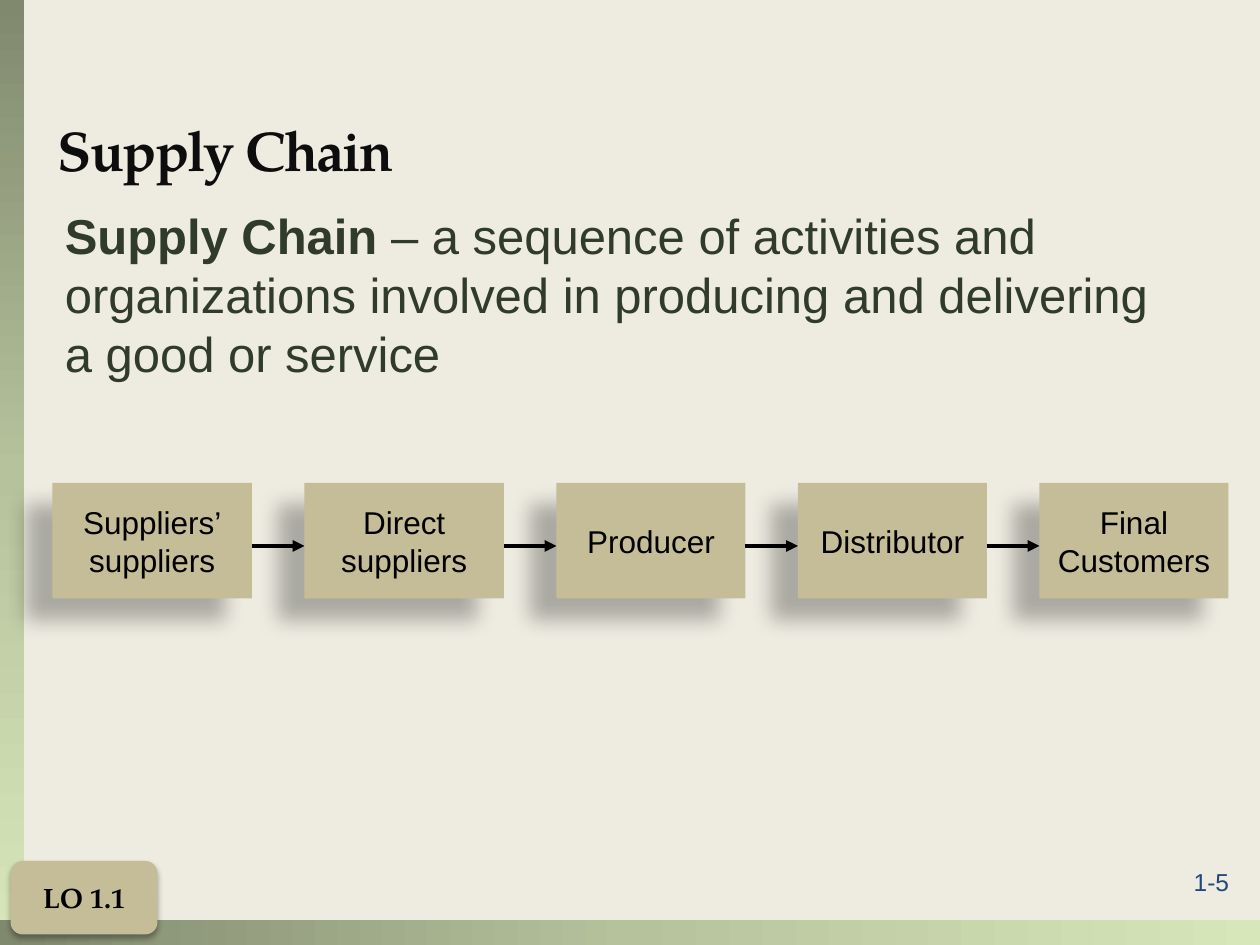
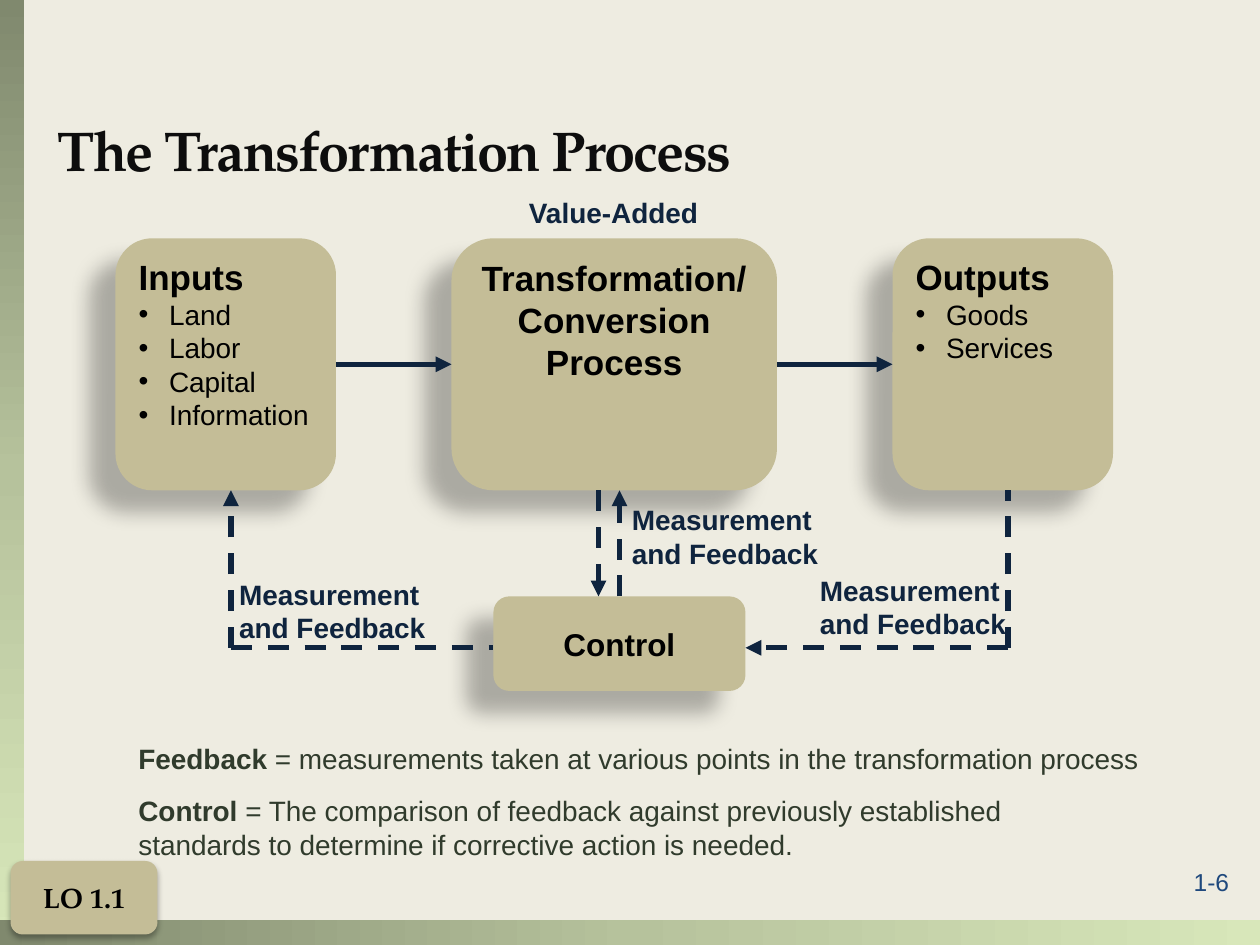
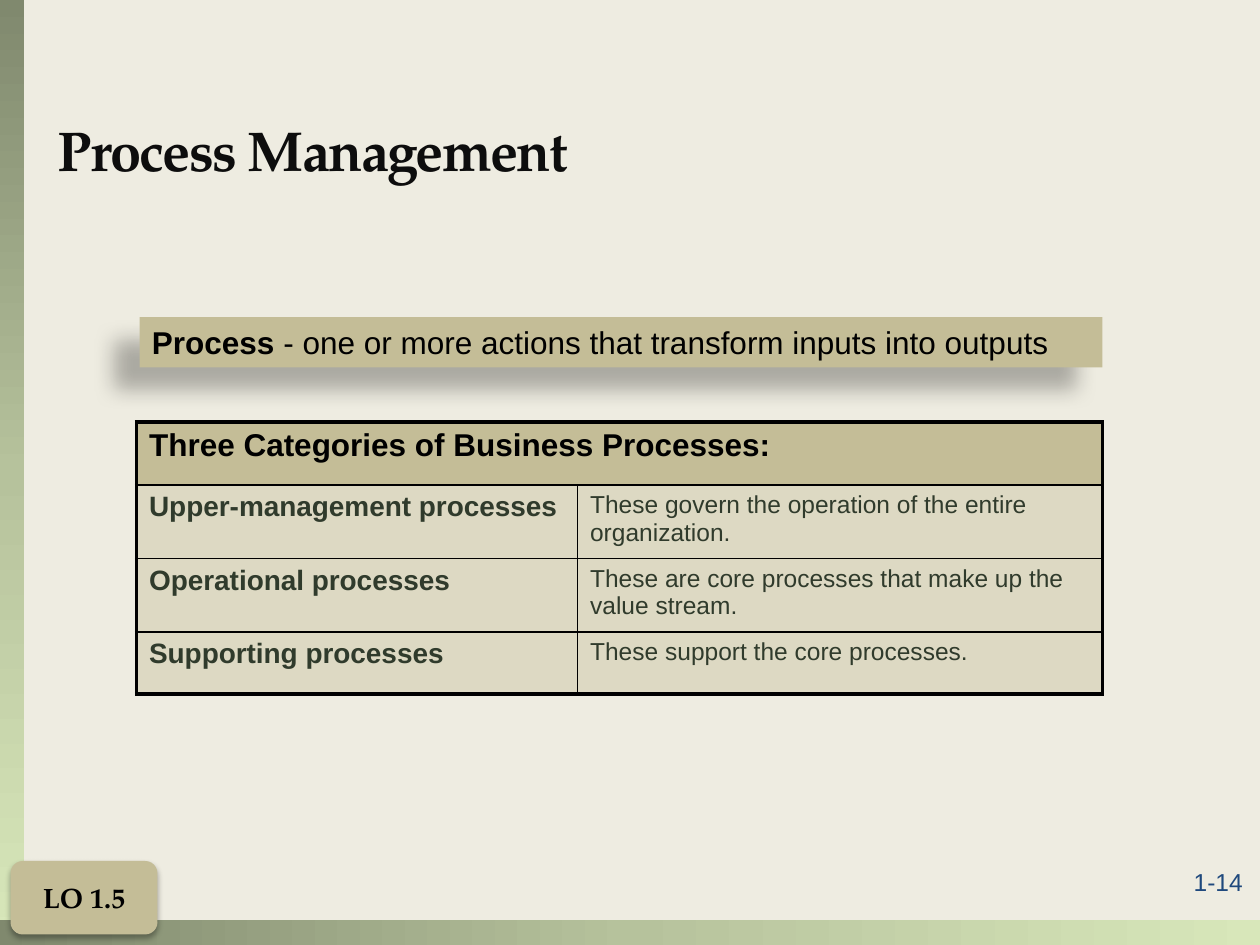
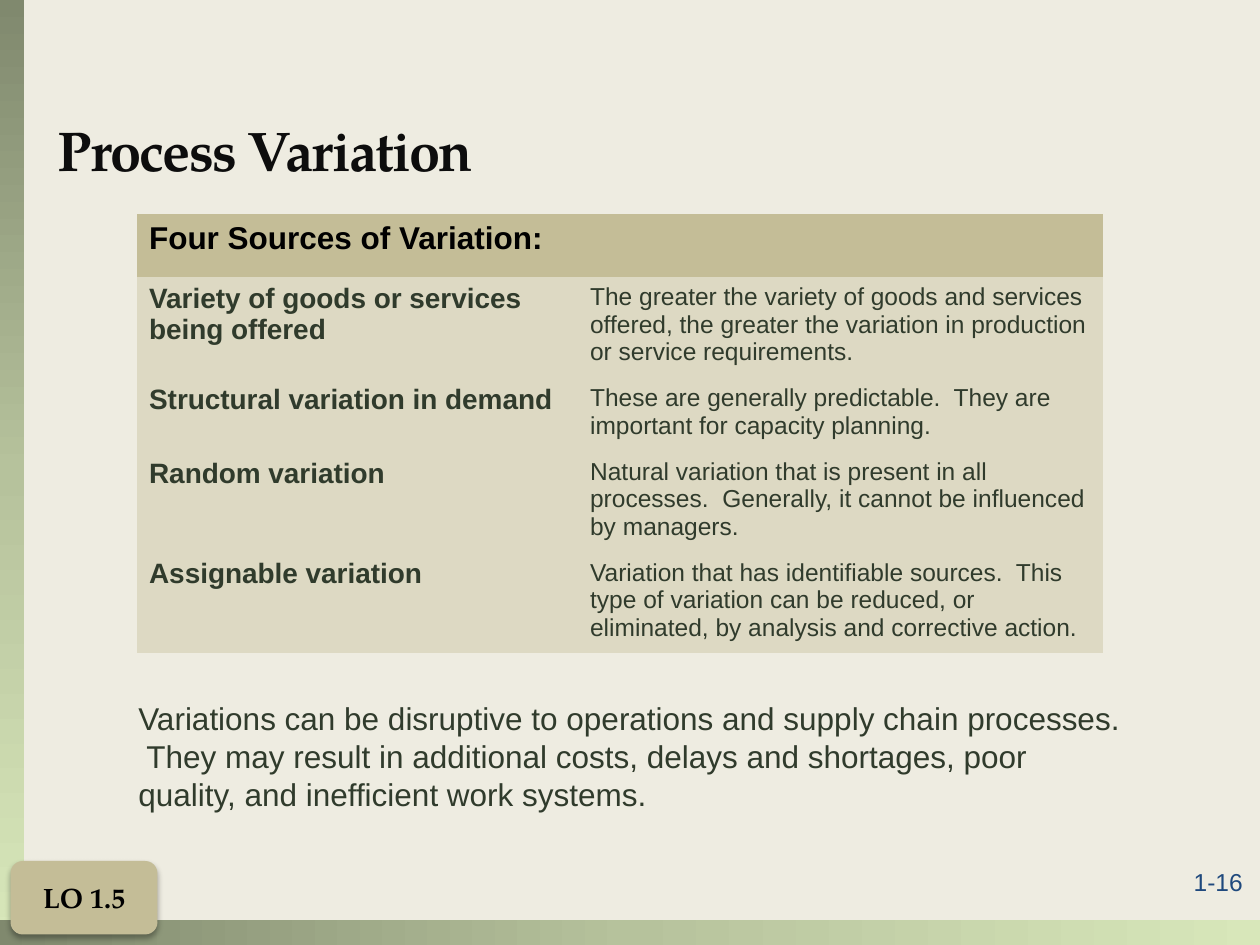
import pptx
import pptx.dml.color
import pptx.enum.dml
import pptx.enum.shapes
import pptx.enum.text
import pptx.oxml
import pptx.oxml.ns
import pptx.util

PX = 7620  # EMU; 120 px to the inch
SANS, SERIF = "Arial", "TeX Gyre Pagella"
PAPER, TAN, SAND = "EEECE1", "C4BD97", "DDD9C3"
BLACK, INK, GREEN, NAVY, BLUE = "000000", "0D0D0D", "303B2C", "0F243E", "1F497D"
BAND = [(0, "80896E"), (50, "B6C29C"), (100, "D8E7BA")]
DEEP_SHADOW = dict(alpha=28, blur=11.8, dist=19.7, angle=141)
SOFT_SHADOW = dict(alpha=32, blur=3.5, dist=2.2, angle=90)
NO_GRID_STYLE = "{2D5ABB26-0587-4C30-8999-92F81FD0307C}"

SHAPE = pptx.enum.shapes.MSO_SHAPE
ALIGN = pptx.enum.text.PP_ALIGN
ANCHOR = pptx.enum.text.MSO_ANCHOR
AUTO_SIZE = pptx.enum.text.MSO_AUTO_SIZE
qn = pptx.oxml.ns.qn


def px(*values):
    return [pptx.util.Emu(v * PX) for v in values]


def rgb(color):
    return pptx.dml.color.RGBColor.from_string(color)


def xml(tag, attrs="", inner=""):
    return pptx.oxml.parse_xml(
        f'<a:{tag} {pptx.oxml.ns.nsdecls("a")} {attrs}>{inner}</a:{tag}>')


def solid(color, alpha=100):
    return (f'<a:solidFill><a:srgbClr val="{color}"><a:alpha val="{alpha * 1000}"/>'
            '</a:srgbClr></a:solidFill>')


def write(tf, paragraphs, size, color, align=ALIGN.LEFT, name=SANS, bold=False):
    """Fill a frame; a paragraph is a string or a list of (text, format) runs."""
    for i, runs in enumerate(paragraphs):
        p = tf.add_paragraph() if i else tf.paragraphs[0]
        p.alignment = align
        for text, changes in [(runs, {})] if isinstance(runs, str) else runs:
            r = p.add_run()
            r.text = text
            fmt = dict(name=name, size=size, bold=bold) | changes
            fmt["size"] = pptx.util.Pt(fmt["size"])
            for key, value in fmt.items():
                setattr(r.font, key, value)
            r.font.color.rgb = rgb(color)


def term(word, meaning):
    return [(word, dict(bold=True)), (meaning, {})]


def add_text(s, box, paragraphs, size, color, wrap=True, **fmt):
    tf = s.shapes.add_textbox(*px(*box)).text_frame
    tf.word_wrap = wrap
    tf.auto_size = AUTO_SIZE.SHAPE_TO_FIT_TEXT
    write(tf, paragraphs, size, color, **fmt)


def add_panel(s, kind, box, paragraphs, size, shadow=DEEP_SHADOW, wrap=False,
              anchor=ANCHOR.MIDDLE, align=ALIGN.CENTER, **fmt):
    """Add a tan shape with a drop shadow and black text."""
    sp = s.shapes.add_shape(kind, *px(*box))
    sp.fill.solid()
    sp.fill.fore_color.rgb = rgb(TAN)
    sp.line.fill.background()
    sp.shadow.inherit = False
    blur, dist = (round(shadow[k] * 12700) for k in ("blur", "dist"))
    sp.element.spPr.find(qn("a:effectLst")).append(xml(
        "outerShdw",
        f'blurRad="{blur}" dist="{dist}" dir="{shadow["angle"] * 60000}" '
        'algn="ctr" rotWithShape="0"',
        f'<a:srgbClr val="{BLACK}"><a:alpha val="{shadow["alpha"] * 1000}"/></a:srgbClr>'))
    tf = sp.text_frame
    tf.word_wrap = wrap
    tf.vertical_anchor = anchor
    write(tf, paragraphs, size, BLACK, align=align, **fmt)
    return sp


def add_line(s, x1, y1, x2, y2, color, width, dashed=False, arrow=True):
    c = s.shapes.add_connector(pptx.enum.shapes.MSO_CONNECTOR.STRAIGHT,
                               *px(x1, y1, x2, y2))
    c.line.color.rgb = rgb(color)
    c.line.width = pptx.util.Pt(width)
    if dashed:
        c.line.dash_style = pptx.enum.dml.MSO_LINE.DASH
    spPr = c.element.spPr
    if arrow:
        spPr.find(qn("a:ln")).append(xml("tailEnd", 'type="triangle"'))
    spPr.append(xml("effectLst"))


def add_band(s, layout, box, angle):
    """Draw a gradient band and hand it to the layout."""
    sp = s.shapes.add_shape(SHAPE.RECTANGLE, *px(*box))
    sp.line.fill.background()
    sp.shadow.inherit = False
    sp.fill.gradient()
    sp.fill.gradient_angle = angle
    stops = next(sp.element.spPr.iter(qn("a:gsLst")))
    for stop in list(stops):
        stops.remove(stop)
    for pos, color in BAND:
        stops.append(xml("gs", f'pos="{pos * 1000}"', f'<a:srgbClr val="{color}"/>'))
    layout.shapes.element.append(sp.element)


def add_slide(prs, layout, title, number, objective):
    s = prs.slides.add_slide(layout)
    sp = s.shapes.title
    sp.left, sp.top, sp.width, sp.height = px(43, 20, 1080, 160)
    tf = sp.text_frame
    tf.vertical_anchor = ANCHOR.BOTTOM
    write(tf, [title], 32, INK, name=SERIF, bold=True)
    rPr = tf.paragraphs[0].runs[0].font._element
    rPr.set("spc", "-100")
    rPr.insert(0, xml("ln", 'w="3175"', solid("D2D0C7", 25)))
    add_text(s, (1125, 820, 80, 41), [number], 14, BLUE)
    add_panel(s, SHAPE.ROUNDED_RECTANGLE, (10, 820, 140, 70), [objective], 16,
              shadow=SOFT_SHADOW, wrap=True, name=SERIF, bold=True)
    return s


def add_chain(s, x, y, steps, height=110, gap=50):
    for i, (width, lines) in enumerate(steps):
        add_panel(s, SHAPE.RECTANGLE, (x, y, width, height), lines, 18)
        x += width + gap
        if i < len(steps) - 1:
            add_line(s, x - gap, y + 60, x, y + 60, BLACK, 2.25)


def add_card(s, box, heading, items):
    sp = add_panel(s, SHAPE.ROUNDED_RECTANGLE, box,
                   [[(heading, dict(size=20, bold=True))], *items], 16,
                   anchor=ANCHOR.TOP, align=ALIGN.LEFT)
    for p in sp.text_frame.paragraphs[1:]:
        pPr = p._p.get_or_add_pPr()
        pPr.set("marL", str(29 * PX))
        pPr.set("indent", str(-29 * PX))
        pPr.append(xml("buFont", f'typeface="{SANS}"'))
        pPr.append(xml("buChar", 'char="•"'))


def add_transformation(s, x, y):
    """Draw inputs, process and outputs with the control loop below them."""
    side, height, middle, outputs = 210, 240, 320, 740
    add_card(s, (x, y, side, height), "Inputs",
             ["Land", "Labor", "Capital", "Information"])
    add_card(s, (x + outputs, y, side, height), "Outputs", ["Goods", "Services"])
    add_panel(s, SHAPE.ROUNDED_RECTANGLE, (x + middle, y, 310, height),
              ["Transformation/", "Conversion", "Process"], 20,
              anchor=ANCHOR.TOP, bold=True)
    control, top, loop = x + 360, y + 341, y + 390
    bottom = y + height
    add_panel(s, SHAPE.ROUNDED_RECTANGLE, (control, top, 240, 90), ["Control"], 18,
              bold=True)

    for left, right in [(side, middle), (middle + 310, outputs)]:
        add_line(s, x + left, y + 120, x + right, y + 120, NAVY, 3)
    into, out = x + 110, x + 850
    for ends, arrow in [
        ((x + 460, bottom, x + 460, top), True),
        ((x + 480, top, x + 480, bottom), True),
        ((into, loop, control, loop), False),
        ((out, loop, control + 240, loop), True),
        ((out, loop, out, bottom), False),
        ((into, loop, into, bottom), True),
    ]:
        add_line(s, *ends, NAVY, 3, dashed=True, arrow=arrow)

    for dx, dy in [(480, 246), (106, 317), (659, 313)]:
        add_text(s, (x + dx, y + dy, 204, 77), ["Measurement", "and Feedback"], 16,
                 NAVY, wrap=False, bold=True)
    add_text(s, (x + 382, y - 47, 187, 44), ["Value-Added"], 16, NAVY, wrap=False,
             bold=True)


def add_borders(cell, **widths):
    tcPr = cell._tc.get_or_add_tcPr()
    for side, width in widths.items():
        tcPr.append(xml(f"ln{side}", f'w="{round(width * 12700)}"', solid(BLACK)))


def add_categories(s, x, y, heading, rows, heights, ruled=False):
    """Add a two-column table: heading row, then name and description rows."""
    widths = [420, 500]
    frame = s.shapes.add_table(len(heights), len(widths),
                               *px(x, y, sum(widths), sum(heights)))
    table = frame.table
    table.first_row = table.horz_banding = False
    next(frame.element.iter(qn("a:tableStyleId"))).text = NO_GRID_STYLE
    for lines, sizes, key in [(table.columns, widths, "width"),
                              (table.rows, heights, "height")]:
        for line, size in zip(lines, px(*sizes)):
            setattr(line, key, size)
    if ruled:
        table.cell(0, 0).merge(table.cell(0, 1))

    last = len(heights) - 1
    for i, texts in enumerate([(heading, ""), *rows]):
        for j, text in enumerate(texts):
            cell = table.cell(i, j)
            if ruled:
                edges = dict(L=j == 0, R=j + cell.span_width == len(widths),
                             T=i == 0, B=i == last)
                add_borders(cell, **{k: 2.25 if edge else 1
                                     for k, edge in edges.items()})
            cell.fill.solid()
            cell.fill.fore_color.rgb = rgb(SAND if i else TAN)
            if text:
                size = 18 if i == 0 else (16, 14)[j]
                write(cell.text_frame, [text], size, GREEN if i else BLACK,
                      bold=j == 0)


def supply_chain(s):
    add_chain(s, 50, 460, [
        (190, ["Suppliers’", "suppliers"]),
        (190, ["Direct", "suppliers"]),
        (180, ["Producer"]),
        (180, ["Distributor"]),
        (180, ["Final", "Customers"]),
    ])
    add_text(s, (50, 190, 1070, 180), [term(
        "Supply Chain", " – a sequence of activities and organizations involved in "
        "producing and delivering a good or service")], 28, GREEN)


def transformation_process(s):
    add_transformation(s, 110, 227)
    add_text(s, (120, 700, 979, 44), [term(
        "Feedback", " = measurements taken at various points in the "
        "transformation process")], 16, GREEN, wrap=False)
    add_text(s, (120, 750, 970, 77), [term(
        "Control", " = The comparison of feedback against previously established "
        "standards to determine if corrective action is needed.")], 16, GREEN)


def process_management(s):
    add_panel(s, SHAPE.RECTANGLE, (133, 302, 917, 48), [term(
        "Process", " - one or more actions that transform inputs into outputs")],
        18, wrap=True, anchor=ANCHOR.TOP, align=ALIGN.LEFT)
    add_categories(s, 130, 402, "Three Categories of Business Processes:", [
        ("Upper-management processes",
         "These govern the operation of the entire organization."),
        ("Operational processes",
         "These are core processes that make up the value stream."),
        ("Supporting processes", "These support the core processes."),
    ], [60, 70, 70, 59], ruled=True)


def process_variation(s):
    add_categories(s, 130, 204, "Four Sources of Variation:", [
        ("Variety of goods or services being offered",
         "The greater the variety of goods and services offered, the greater the "
         "variation in production or service requirements."),
        ("Structural variation in demand",
         "These are generally predictable.  They are important for capacity planning."),
        ("Random variation",
         "Natural variation that is present in all processes.  Generally, it cannot "
         "be influenced by managers."),
        ("Assignable variation",
         "Variation that has identifiable sources.  This type of variation can be "
         "reduced, or eliminated, by analysis and corrective action."),
    ], [60, 70, 70, 59, 59])
    add_text(s, (120, 660, 962, 120), [
        "Variations can be disruptive to operations and supply chain processes.  "
        "They may result in additional costs, delays and shortages, poor quality, "
        "and inefficient work systems."], 18, GREEN)


def main():
    prs = pptx.Presentation()
    prs.slide_width, prs.slide_height = px(1200, 900)
    background = prs.slide_master.background.fill
    background.solid()
    background.fore_color.rgb = rgb(PAPER)
    layout = prs.slide_layouts.get_by_name("Title Only")

    for title, number, objective, fill_slide in [
        ("Supply Chain", "1-5", "LO 1.1", supply_chain),
        ("The Transformation Process", "1-6", "LO 1.1", transformation_process),
        ("Process Management", "1-14", "LO 1.5", process_management),
        ("Process Variation", "1-16", "LO 1.5", process_variation),
    ]:
        s = add_slide(prs, layout, title, number, objective)
        fill_slide(s)

    add_band(s, layout, (0, 0, 23, 897), 270)
    add_band(s, layout, (0, 876, 1200, 24), 0)
    prs.save("out.pptx")


if __name__ == "__main__":
    main()
